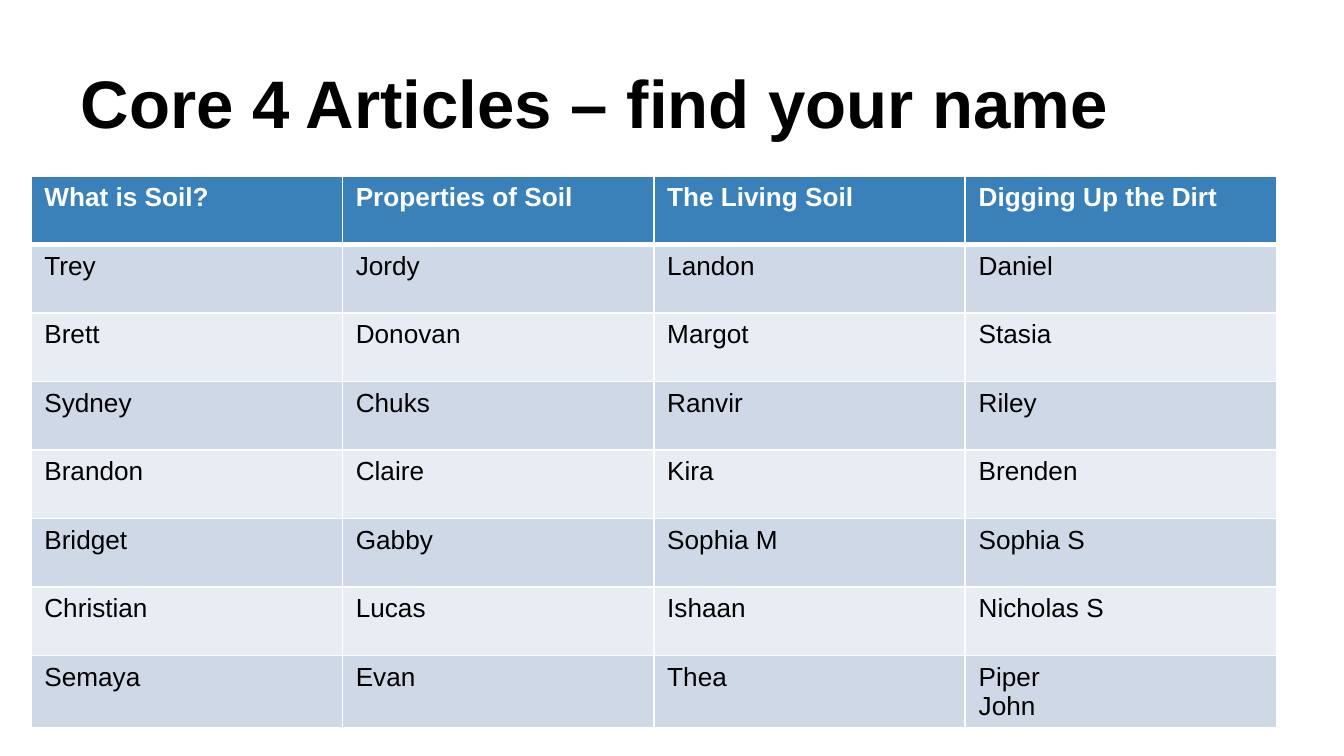
from lxml import etree
from pptx import Presentation
from pptx import util as u
from pptx.dml.color import RGBColor
from pptx.enum import text
from pptx.oxml import ns


def color(value):
    return RGBColor.from_string(value)


def set_borders(cell, widths):
    properties = cell._tc.get_or_add_tcPr()
    for index, (side, width) in enumerate(widths.items()):
        line = etree.Element(ns.qn(f"a:ln{side}"), w=str(u.Pt(width)))
        fill = etree.SubElement(line, ns.qn("a:solidFill"))
        etree.SubElement(fill, ns.qn("a:srgbClr"), val="FFFFFF")
        properties.insert(index, line)


articles = {
    "What is Soil?": ["Trey", "Brett", "Sydney", "Brandon", "Bridget", "Christian", "Semaya"],
    "Properties of Soil": ["Jordy", "Donovan", "Chuks", "Claire", "Gabby", "Lucas", "Evan"],
    "The Living Soil": ["Landon", "Margot", "Ranvir", "Kira", "Sophia M", "Ishaan", "Thea"],
    "Digging Up the Dirt": ["Daniel", "Stasia", "Riley", "Brenden", "Sophia S", "Nicholas S", "Piper\nJohn"],
}

deck = Presentation()
deck.slide_width, deck.slide_height = u.Inches(10), u.Inches(10 * 9 / 16)
page = deck.slides.add_slide(deck.slide_layouts[5])

title = page.shapes.title
title.left, title.top = u.Inches(0.5), u.Inches(0.23)
title.width, title.height = u.Inches(9), u.Inches(0.93)
frame = title.text_frame
frame.text = "Core 4 Articles – find your name"
frame.vertical_anchor = text.MSO_ANCHOR.BOTTOM
frame.auto_size = text.MSO_AUTO_SIZE.NONE
frame.margin_left = frame.margin_right = u.Inches(0.1)
frame.margin_top = frame.margin_bottom = u.Inches(0.1)
heading = frame.paragraphs[0]
heading.alignment = text.PP_ALIGN.LEFT
heading.font.name = "Arial"
heading.font.size = u.Pt(36)
heading.font.bold = True
heading.font.color.rgb = color("000000")

row_count = 8
table = page.shapes.add_table(
    row_count, len(articles), u.Inches(0.23), u.Inches(1.31), u.Inches(9.27), u.Inches(0.51 * row_count)
).table

for column, (article, readers) in enumerate(articles.items()):
    for row, entry in enumerate([article, *readers]):
        is_header = row == 0
        cell = table.cell(row, column)
        cell.text = entry
        cell.fill.solid()
        cell.fill.fore_color.rgb = color("3A81BA" if is_header else ("E8EDF3", "CED8E7")[row % 2])
        set_borders(cell, {"L": 1, "R": 1, "T": 3 if row == 1 else 1, "B": 3 if is_header else 1})
        for para in cell.text_frame.paragraphs:
            para.font.name = "Arial"
            para.font.size = u.Pt(14)
            para.font.bold = is_header
            para.font.color.rgb = color("FFFFFF" if is_header else "000000")

deck.save("out.pptx")
